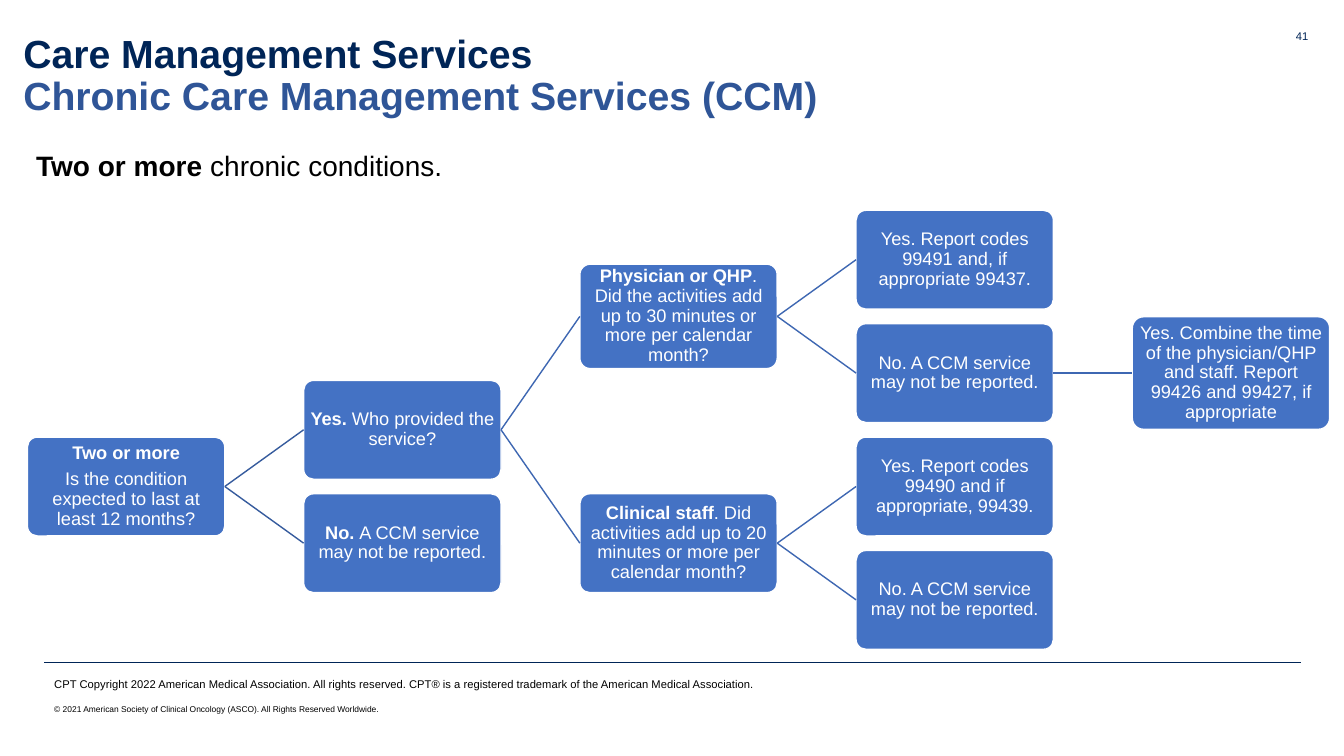
from lxml import etree
from pptx import Presentation
from pptx import util as u
from pptx.dml.color import RGBColor
from pptx.enum import shapes, text
from pptx.oxml.ns import qn

Pt = u.Pt
NAVY, BLUE, BLACK, WHITE = "002557", "4472C4", "000000", "FFFFFF"


def color(value):
    return RGBColor.from_string(value)


def write(paragraph, runs, size, ink, align=text.PP_ALIGN.LEFT):
    for words, bold in runs:
        run = paragraph.add_run()
        run.text = words
        run.font.bold = bold
    paragraph.alignment = align
    paragraph.font.name = "Arial"
    paragraph.font.size = Pt(size)
    paragraph.font.color.rgb = color(ink)


deck = Presentation()
deck.slide_width, deck.slide_height = Pt(960), Pt(540)
slide = deck.slides.add_slide(deck.slide_layouts[5])

title = slide.shapes.title
title.left, title.top, title.width, title.height = Pt(9.4), Pt(25), Pt(828), Pt(60)
title.text_frame.vertical_anchor = text.MSO_ANCHOR.MIDDLE
title.text_frame.auto_size = text.MSO_AUTO_SIZE.NONE
heading = title.text_frame.paragraphs[0]
heading.alignment = text.PP_ALIGN.LEFT
heading.line_spacing = 0.9
heading.font.name = "Arial"
heading.font.size = Pt(28)
heading.font.bold = True
topic = heading.add_run()
topic.text = "Care Management Services"
topic.font.color.rgb = color(NAVY)
heading.add_line_break()
subtopic = heading.add_run()
subtopic.text = "Chronic Care Management Services (CCM)"
subtopic.font.color.rgb = color("2F5597")

NO_SERVICE = "A CCM service may not be reported."
steps = {
    "condition": (0, 2, 70.6, [[("Two or more", True)],
                               [("Is the condition expected to last at least 12 months?", False)]]),
    "provider": (1, 1.5, 70.6, [[("Yes. ", True), ("Who provided the service?", False)]]),
    "short term": (1, 2.5, 70.6, [[("No. ", True), (NO_SERVICE, False)]]),
    "physician": (2, 0.5, 74.6, [[("Physician or QHP", True),
                                  (". Did the activities add up to 30 minutes or more per calendar month?", False)]]),
    "staff": (2, 2.5, 70.6, [[("Clinical staff", True),
                              (". Did activities add up to 20 minutes or more per calendar month?", False)]]),
    "physician yes": (3, 0, 70.6, [[("Yes. Report codes 99491 and, if appropriate 99437.", False)]]),
    "physician no": (3, 1, 70.6, [[("No. " + NO_SERVICE, False)]]),
    "staff yes": (3, 2, 70.6, [[("Yes. Report codes 99490 and if appropriate, 99439.", False)]]),
    "staff no": (3, 3, 70.6, [[("No. " + NO_SERVICE, False)]]),
    "combined": (4, 1, 80.4, [[("Yes. Combine the time of the physician/QHP and staff. "
                                "Report 99426 and 99427, if appropriate", False)]]),
}
boxes = {}
for step, (column, row, height, paragraphs) in steps.items():
    middle = 185.5 + 81 * row
    box = slide.shapes.add_shape(shapes.MSO_SHAPE.ROUNDED_RECTANGLE, Pt(19.6 + 197.3 * column),
                                 Pt(middle - height / 2), Pt(141), Pt(height))
    box.adjustments[0] = 0.1
    box.shadow.inherit = False
    box.fill.solid()
    box.fill.fore_color.rgb = color(BLUE)
    box.line.color.rgb = color(WHITE)
    box.line.width = Pt(1)
    frame = box.text_frame
    frame.word_wrap = True
    frame.vertical_anchor = text.MSO_ANCHOR.MIDDLE
    frame.margin_left = frame.margin_right = frame.margin_top = frame.margin_bottom = Pt(1)
    for index, runs in enumerate(paragraphs):
        paragraph = frame.add_paragraph() if index else frame.paragraphs[0]
        write(paragraph, runs, 13, WHITE, text.PP_ALIGN.CENTER)
        paragraph.line_spacing = 0.9
        paragraph.space_after = Pt(4.5)
    boxes[step] = box

branches = [
    ("condition", "provider", "365B9D"), ("condition", "short term", "365B9D"),
    ("provider", "physician", "3E67B2"), ("provider", "staff", "3E67B2"),
    ("physician", "physician yes", "3E67B2"), ("physician", "physician no", "3E67B2"),
    ("staff", "staff yes", "3E67B2"), ("staff", "staff no", "3E67B2"),
    ("physician no", "combined", "3E67B2"),
]
links = []
for question, answer, ink in branches:
    branch = slide.shapes.add_connector(shapes.MSO_CONNECTOR.STRAIGHT, 0, 0, 0, 0)
    branch.begin_connect(boxes[question], 3)
    branch.end_connect(boxes[answer], 1)
    links.append((branch, ink, 1))
footer_rule = slide.shapes.add_connector(shapes.MSO_CONNECTOR.STRAIGHT,
                                         Pt(31.5), Pt(473), Pt(929.5), Pt(473))
links.append((footer_rule, NAVY, 0.25))
for link, ink, width in links:
    link.line.color.rgb = color(ink)
    link.line.width = Pt(width)
    etree.SubElement(link._element.spPr, qn("a:effectLst"))

LEFT, RIGHT = text.PP_ALIGN.LEFT, text.PP_ALIGN.RIGHT
TOP, MIDDLE = text.MSO_ANCHOR.TOP, text.MSO_ANCHOR.MIDDLE
notes = [
    (31.7, 492.5, 324, 28.8, 6, BLACK, LEFT, MIDDLE,
     [("© 2021 American Society of Clinical Oncology (ASCO). All Rights Reserved Worldwide.", False)]),
    (874, 17.3, 67.7, 28.8, 8, NAVY, RIGHT, TOP, [("41", False)]),
    (18.7, 102.2, 680.4, 31.5, 20, BLACK, LEFT, TOP,
     [("Two or more ", True), ("chronic conditions.", False)]),
    (31.7, 480.2, 650.9, 17.3, 8, BLACK, LEFT, TOP,
     [("CPT Copyright 2022 American Medical Association. All rights reserved. "
       "CPT® is a registered trademark of the American Medical Association.", False)]),
]
for left, top, width, height, size, ink, align, anchor, runs in notes:
    note = slide.shapes.add_textbox(Pt(left), Pt(top), Pt(width), Pt(height)).text_frame
    note.word_wrap = True
    note.vertical_anchor = anchor
    write(note.paragraphs[0], runs, size, ink, align)

deck.save("out.pptx")
